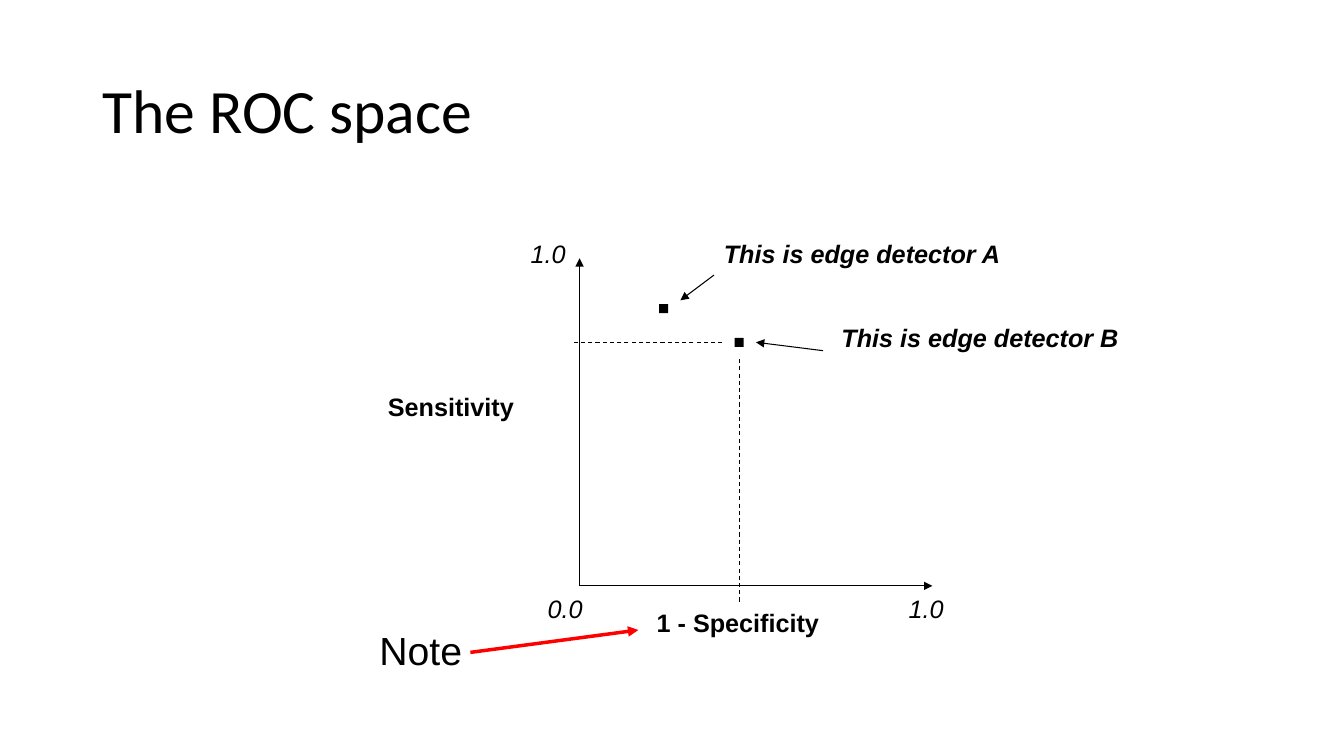
import pptx
import pptx.dml.color
import pptx.enum.dml
import pptx.enum.shapes
import pptx.enum.text
import pptx.oxml.ns
import pptx.util
from lxml import etree

Pt = pptx.util.Pt
COLORS = {"ink": "000000", "note": "FF0000"}

deck = pptx.Presentation()
deck.slide_width, deck.slide_height = Pt(960), Pt(540)
slide = deck.slides.add_slide(deck.slide_layouts[6])


def add_label(text, left, top, width, height, size=18, bold=False, italic=False,
              font="Arial", wrap=True):
    label = slide.shapes.add_textbox(Pt(left), Pt(top), Pt(width), Pt(height))
    frame = label.text_frame
    frame.word_wrap = wrap
    frame.text = text
    style = frame.paragraphs[0].runs[0].font
    style.name, style.size = font, Pt(size)
    style.bold, style.italic = bold, italic
    style.color.rgb = pptx.dml.color.RGBColor.from_string(COLORS["ink"])
    return frame


def add_line(start, end, color="ink", width=0.75, arrow=True):
    """Draw a solid arrow, or a dashed guide when arrow is False."""
    line = slide.shapes.add_connector(
        pptx.enum.shapes.MSO_CONNECTOR.STRAIGHT, *map(Pt, start + end))
    line.line.width = Pt(width)
    line.line.color.rgb = pptx.dml.color.RGBColor.from_string(COLORS[color])
    if arrow:
        etree.SubElement(line.line._get_or_add_ln(),
                         pptx.oxml.ns.qn("a:tailEnd"), type="triangle")
    else:
        line.line.dash_style = pptx.enum.dml.MSO_LINE.DASH
    etree.SubElement(line._element.spPr, pptx.oxml.ns.qn("a:effectLst"))


title = add_label("The ROC space", 66, 29, 828, 104, size=44, font="Calibri")
title.vertical_anchor = pptx.enum.text.MSO_ANCHOR.MIDDLE
title.paragraphs[0].line_spacing = 0.9

# Axes
origin_x, origin_y = 414, 418.5
add_line((origin_x, origin_y), (origin_x, 184.5))
add_line((origin_x, origin_y), (666, origin_y))
add_label("1 - Specificity", 462, 430.5, 192, 29, bold=True)
add_label("Sensitivity", 270, 276, 138, 29, bold=True)
for value, left, top in [("1.0", 372, 166.5), ("0.0", 384, 420), ("1.0", 642, 420)]:
    add_label(value, left, top, 40, 29, italic=True, wrap=False)

# Edge detectors
detector_a, detector_b = (474, 220.5), (528, 244.5)
marker_size = 6.5
for x, y in (detector_a, detector_b):
    marker = slide.shapes.add_shape(
        pptx.enum.shapes.MSO_SHAPE.RECTANGLE, Pt(x - marker_size / 2),
        Pt(y - marker_size / 2), Pt(marker_size), Pt(marker_size))
    marker.shadow.inherit = False
    marker.fill.solid()
    marker.fill.fore_color.rgb = pptx.dml.color.RGBColor.from_string(COLORS["ink"])
    marker.line.fill.background()

add_label("This is edge detector A", 510, 166.5, 222, 29, bold=True, italic=True)
add_line((510, 196.5), (486, 214.5))
add_label("This is edge detector B", 594, 226.5, 222, 29, bold=True, italic=True)
add_line((588, 250.5), (540, 244.5))

# Coordinates of detector B
b_x, b_y = detector_b
add_line((b_x, b_y + 12), (b_x, origin_y + 12), arrow=False)
add_line((b_x - 12, b_y), (origin_x - 6, b_y), arrow=False)

add_line((336, 466), (456, 450), color="note", width=2.5)
add_label("Note", 264, 444, 114, 41, size=28)

deck.save("out.pptx")
